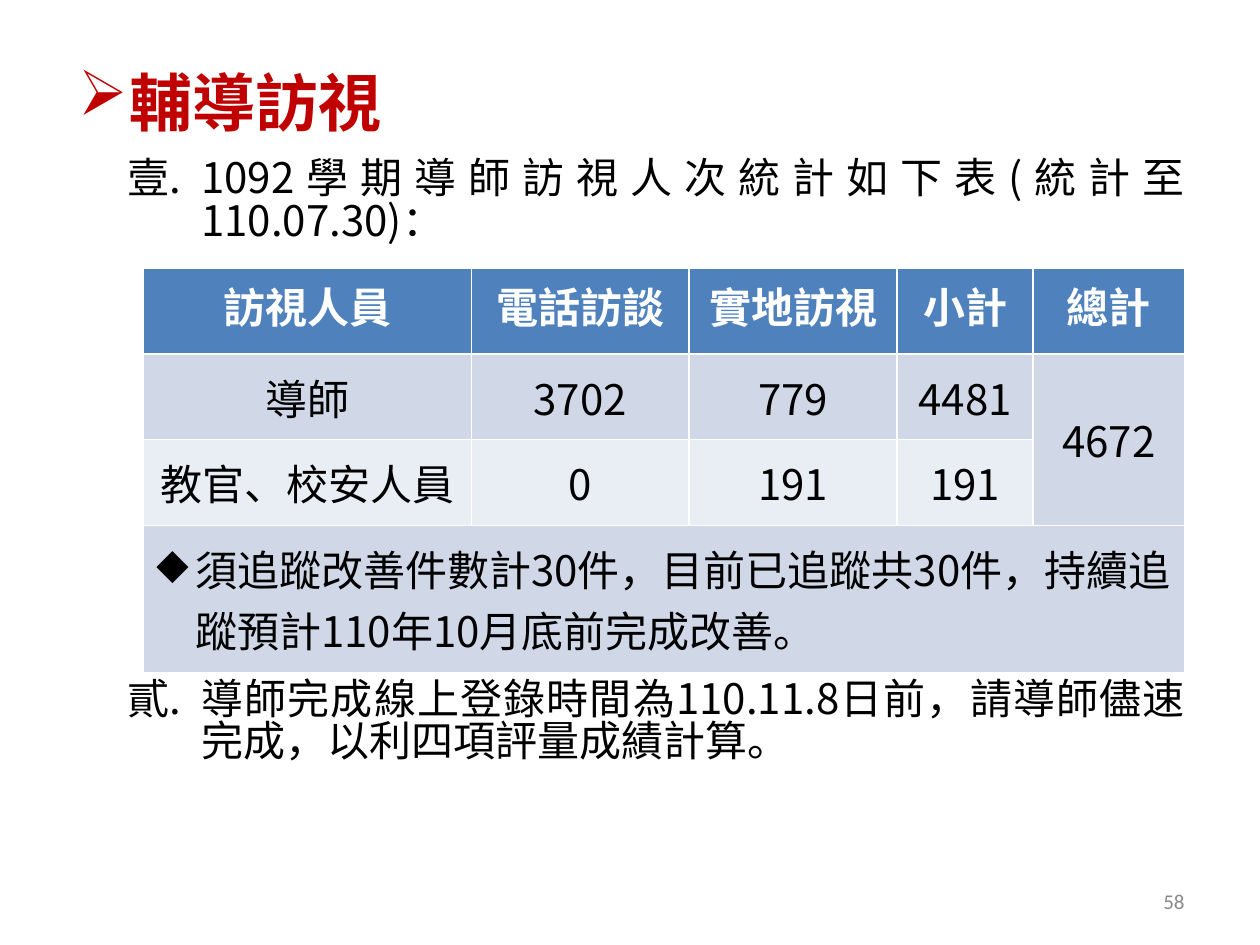
from dataclasses import dataclass

from lxml.etree import SubElement
from pptx import Presentation
from pptx.dml.color import RGBColor as Color
from pptx.enum.text import MSO_ANCHOR as Anchor, PP_ALIGN as Align
from pptx.oxml.ns import qn
from pptx.util import Inches, Pt


@dataclass(frozen=True)
class Theme:
    font: str = "Noto Sans CJK SC"
    number_font: str = "Calibri"
    title_size: int = 36
    body_size: int = 24
    number_size: int = 12
    red: str = "C00000"
    black: str = "000000"
    white: str = "FFFFFF"
    gray: str = "898989"
    header: str = "4F81BD"
    bands: tuple = ("D0D8E8", "E9EDF4")


THEME = Theme()

COLUMN_WIDTHS = (2.6, 1.73, 1.65, 1.08, 1.2)
ROW_HEIGHTS = (0.68, 0.68, 0.68, 1.17)
VISITS = (
    ("訪視人員", "電話訪談", "實地訪視", "小計", "總計"),
    ("導師", "3702", "779", "4481", "4672"),
    ("教官、校安人員", "0", "191", "191"),
    ("須追蹤改善件數計30件，目前已追蹤共30件，持續追蹤預計110年10月底前完成改善。",),
)


def style(paragraph, size, color, bold=False, align=Align.LEFT, name=THEME.font):
    paragraph.alignment = align
    font = paragraph.font
    font.name, font.size, font.bold = name, Pt(size), bold
    font.color.rgb = Color.from_string(color)
    # East Asian text has its own typeface setting
    SubElement(font._element, qn("a:ea"), typeface=name)


def add_bullet(paragraph, indent, tag, **attributes):
    properties = paragraph._p.get_or_add_pPr()
    properties.set("marL", str(Inches(indent[0])))
    properties.set("indent", str(Inches(indent[1])))
    SubElement(properties, qn(tag), **attributes)


def add_title(page, text):
    title = page.shapes.title
    title.left, title.top = Inches(0.52), Inches(0.45)
    title.width, title.height = Inches(8.98), Inches(0.82)
    title.text_frame.vertical_anchor = Anchor.TOP
    title.text_frame.text = text
    para = title.text_frame.paragraphs[0]
    add_bullet(para, (0.41, -0.41), "a:buChar", char="➢")
    style(para, THEME.title_size, THEME.red, bold=True)


def add_text(page, text, left, top, width, height):
    box = page.shapes.add_textbox(*map(Inches, (left, top, width, height)))
    box.text_frame.word_wrap = True
    box.text_frame.text = text
    return box.text_frame


def add_numbered_item(page, number, text, top):
    frame = add_text(page, text, 0.52, top, 8.98, 0.9)
    para = frame.paragraphs[0]
    para.line_spacing = 0.84
    add_bullet(para, (0.98, -0.59), "a:buAutoNum",
               type="ea1ChtPeriod", startAt=str(number))
    style(para, THEME.body_size, THEME.black, align=Align.JUSTIFY)


def add_visit_table(page):
    table = page.shapes.add_table(
        len(ROW_HEIGHTS), len(COLUMN_WIDTHS), Inches(1.14), Inches(2.13),
        Inches(sum(COLUMN_WIDTHS)), Inches(sum(ROW_HEIGHTS))).table
    for column, width in zip(table.columns, COLUMN_WIDTHS):
        column.width = Inches(width)
    for row, height in zip(table.rows, ROW_HEIGHTS):
        row.height = Inches(height)

    # Grand total spans both staff rows, the note spans all columns
    table.cell(1, 4).merge(table.cell(2, 4))
    table.cell(3, 0).merge(table.cell(3, 4))

    for row_index, texts in enumerate(VISITS):
        is_header = row_index == 0
        is_note = len(texts) == 1
        fill = THEME.header if is_header else THEME.bands[(row_index - 1) % 2]
        for column_index, text in enumerate(texts):
            cell = table.cell(row_index, column_index)
            cell.fill.solid()
            cell.fill.fore_color.rgb = Color.from_string(fill)
            cell.vertical_anchor = Anchor.TOP if is_header else Anchor.MIDDLE
            cell.text = text
            para = cell.text_frame.paragraphs[0]
            if is_note:
                add_bullet(para, (0.31, -0.31), "a:buChar", char="◆")
            style(para, THEME.body_size,
                  THEME.white if is_header else THEME.black, bold=is_header,
                  align=Align.LEFT if is_note else Align.CENTER)


def add_page_number(page, number):
    frame = add_text(page, number, 7.17, 6.95, 2.33, 0.4)
    frame.vertical_anchor = Anchor.MIDDLE
    style(frame.paragraphs[0], THEME.number_size, THEME.gray,
          align=Align.RIGHT, name=THEME.number_font)


def main():
    deck = Presentation()
    deck.slide_width, deck.slide_height = Inches(10), Inches(7.5)
    page = deck.slides.add_slide(deck.slide_layouts[5])

    # Heading and first item
    add_title(page, "輔導訪視")
    add_numbered_item(page, 1, "1092學期導師訪視人次統計如下表(統計至110.07.30)：", 1.22)

    # Visit statistics
    add_visit_table(page)

    # Second item and footer
    add_numbered_item(
        page, 2, "導師完成線上登錄時間為110.11.8日前，請導師儘速完成，以利四項評量成績計算。", 5.35)
    add_page_number(page, "58")
    deck.save("out.pptx")


if __name__ == "__main__":
    main()
